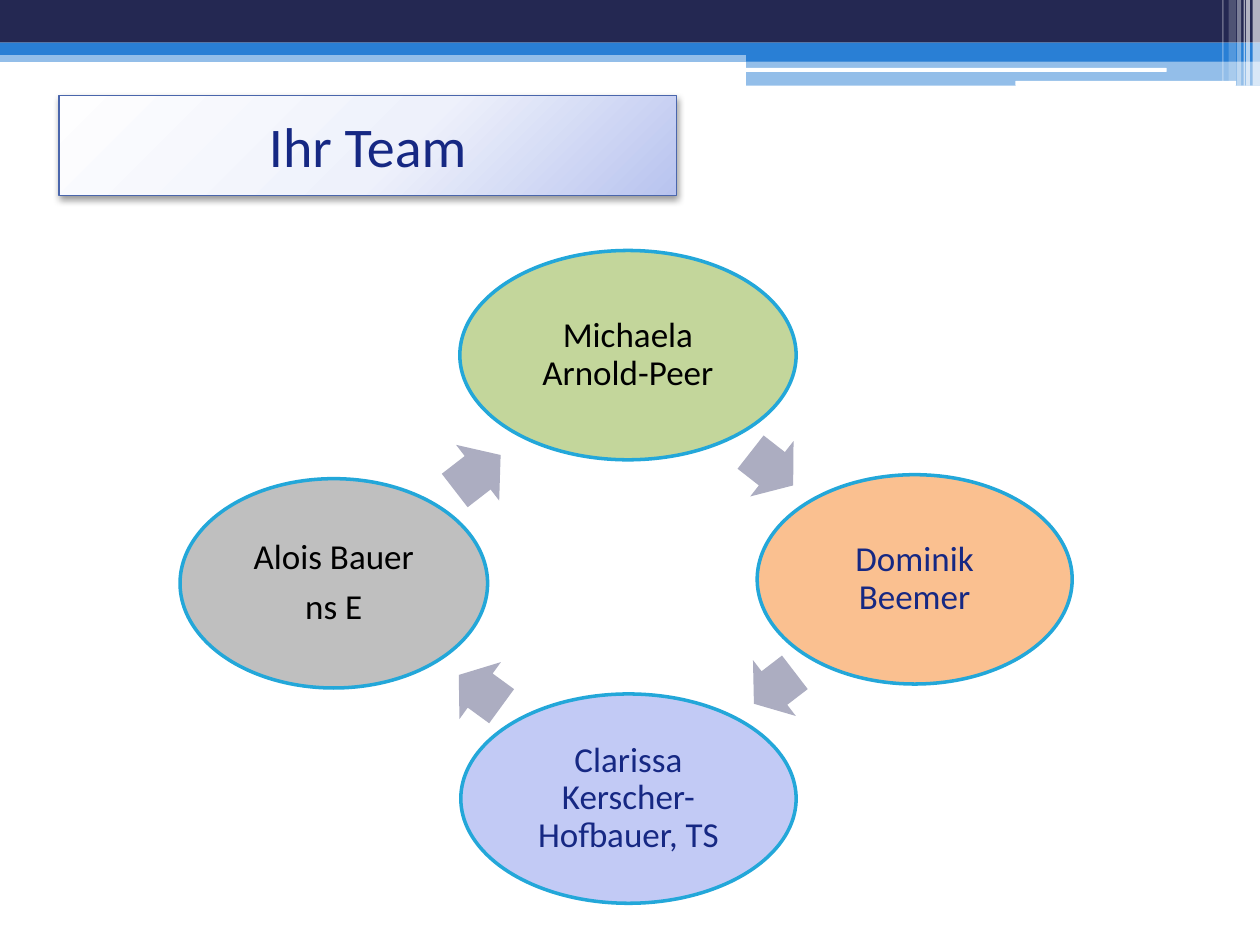
import pptx
import pptx.dml.color
import pptx.enum.shapes
import pptx.enum.text
import pptx.oxml
import pptx.oxml.ns
import pptx.util
from lxml import etree

Cm, Pt = pptx.util.Cm, pptx.util.Pt
RGBColor = pptx.dml.color.RGBColor
SHAPE = pptx.enum.shapes.MSO_SHAPE
qn = pptx.oxml.ns.qn

WHITE = RGBColor(0xFF, 0xFF, 0xFF)
BLACK = RGBColor(0x00, 0x00, 0x00)
NAVY = RGBColor(0x24, 0x28, 0x52)
BLUE = RGBColor(0x29, 0x7F, 0xD5)
INK = RGBColor(0x16, 0x28, 0x83)
TITLE_EDGE = RGBColor(0x4A, 0x66, 0xAC)
OVAL_EDGE = RGBColor(0x23, 0xA7, 0xD9)
ARROW_GREY = RGBColor(0xAC, 0xAD, 0xC1)
GREEN = RGBColor(0xC3, 0xD6, 0x9B)
ORANGE = RGBColor(0xFA, 0xC0, 0x90)
LILAC = RGBColor(0xC2, 0xCA, 0xF5)
GREY = RGBColor(0xBF, 0xBF, 0xBF)

TITLE = "Ihr Team"
TITLE_BOX = (1.19, 1.93, 12.45, 2.01)
TITLE_STOPS = [(0, "FEFEFF"), (55, "EEF1FB"), (100, "B8C3EF")]

# Centre x, centre y, width (cm), fill, text colour, paragraphs
MEMBERS = [
    (12.66, 7.16, 6.78, GREEN, BLACK, ["Michaela Arnold-Peer"]),
    (18.44, 11.68, 6.35, ORANGE, INK, ["Dominik Beemer"]),
    (12.67, 16.1, 6.76, LILAC, INK, ["Clarissa Kerscher-Hofbauer, TS"]),
    (6.73, 11.76, 6.2, GREY, BLACK, ["Alois Bauer", "ns E"]),
]
OVAL_HEIGHT = 4.22

# Centre x, centre y, length (cm), rotation
ARROWS = [
    (15.56, 9.45, 1.09, 38),
    (15.61, 13.87, 1.04, 142.5),
    (9.68, 13.92, 1.07, 216.1),
    (9.63, 9.53, 1.17, 322.3),
]
ARROW_HEIGHT = 1.42

# Left, top, width, height (cm), colour, opacity in percent
BANDS = [
    (0, 1.02, 25.4, 0.23, BLUE, 50),
    (0, 0, 25.4, 0.86, NAVY, 100),
    (0, 0.86, 25.4, 0.25, BLUE, 100),
    (15.04, 0.99, 10.36, 0.25, BLUE, 100),
    (15.04, 1.22, 10.36, 0.51, BLUE, 50),
]
RULES = [(15.01, 1.37, 8.51, 0.08), (20.47, 1.63, 4.45, 0.1)]
# Left, width, height (cm), opacity in percent
STRIPES = [
    (25.25, 0.15, 1.73, 65),
    (25.12, 0.08, 1.73, 65),
    (25.07, 0.03, 1.73, 60),
    (24.94, 0.08, 1.73, 40),
    (24.77, 0.15, 1.63, 20),
    (24.64, 0.03, 1.63, 30),
]


def add_shape(slide, kind, box, fill, edge=None, edge_width=0, opacity=100):
    shape = slide.shapes.add_shape(kind, *(Cm(value) for value in box))
    shape.shadow.inherit = False
    shape.fill.solid()
    shape.fill.fore_color.rgb = fill
    if opacity < 100:
        color = shape._element.spPr.find(".//" + qn("a:srgbClr"))
        etree.SubElement(color, qn("a:alpha"), val=str(opacity * 1000))
    if edge is None:
        shape.line.fill.background()
    else:
        shape.line.color.rgb = edge
        shape.line.width = Pt(edge_width)
    return shape


def centred(x, y, width, height):
    return x - width / 2, y - height / 2, width, height


def write_text(shape, lines, size, color, paragraph_format):
    frame = shape.text_frame
    frame.word_wrap = True
    frame.vertical_anchor = pptx.enum.text.MSO_ANCHOR.MIDDLE
    frame.text = "\n".join(lines)
    for paragraph in frame.paragraphs:
        paragraph.alignment = pptx.enum.text.PP_ALIGN.CENTER
        for name, value in paragraph_format.items():
            setattr(paragraph, name, value)
        for name, value in {"size": Pt(size), "name": "Calibri"}.items():
            setattr(paragraph.font, name, value)
        paragraph.font.color.rgb = color


def style_title(shape):
    """Give the title box its radial gradient and soft shadow."""
    properties = shape._element.spPr
    stops = "".join(
        f'<a:gs pos="{position * 1000}"><a:srgbClr val="{color}"/></a:gs>'
        for position, color in TITLE_STOPS)
    namespace = pptx.oxml.ns.nsdecls("a")
    gradient = pptx.oxml.parse_xml(
        f'<a:gradFill {namespace} rotWithShape="1"><a:gsLst>{stops}</a:gsLst>'
        '<a:path path="circle"><a:fillToRect l="-40000" t="-90000" '
        'r="140000" b="190000"/></a:path></a:gradFill>')
    properties.replace(properties.find(qn("a:solidFill")), gradient)
    properties.find(qn("a:effectLst")).append(pptx.oxml.parse_xml(
        f'<a:outerShdw {namespace} blurRad="{Pt(4.1)}" dist="{Pt(2)}" '
        'dir="5400000" rotWithShape="0"><a:srgbClr val="000000">'
        '<a:alpha val="40000"/></a:srgbClr></a:outerShdw>'))


def add_header(slide):
    for *box, color, opacity in BANDS:
        add_shape(slide, SHAPE.RECTANGLE, box, color, opacity=opacity)
    for box in RULES:
        add_shape(slide, SHAPE.ROUNDED_RECTANGLE, box, WHITE)
    for left, width, height, opacity in STRIPES:
        add_shape(slide, SHAPE.RECTANGLE, (left, 0, width, height), WHITE,
                  opacity=opacity)


def add_cycle(slide):
    for member, arrow_data in zip(MEMBERS, ARROWS):
        x, y, width, fill, color, lines = member
        oval = add_shape(slide, SHAPE.OVAL, centred(x, y, width, OVAL_HEIGHT),
                         fill, OVAL_EDGE, 2)
        for side in ("left", "top", "right", "bottom"):
            setattr(oval.text_frame, "margin_" + side, Cm(0.08))
        write_text(oval, lines, 20, color,
                   {"line_spacing": 0.9, "space_after": Pt(7)})

        x, y, length, rotation = arrow_data
        arrow = add_shape(slide, SHAPE.RIGHT_ARROW,
                          centred(x, y, length, ARROW_HEIGHT), ARROW_GREY)
        arrow.adjustments[0] = 0.6
        arrow.adjustments[1] = 0.5
        arrow.rotation = rotation


def main():
    presentation = pptx.Presentation()
    presentation.slide_width = Cm(25.4)
    presentation.slide_height = Cm(19.05)
    slide = presentation.slides.add_slide(presentation.slide_layouts[6])
    add_header(slide)
    title = add_shape(slide, SHAPE.RECTANGLE, TITLE_BOX, WHITE, TITLE_EDGE, 0.75)
    style_title(title)
    write_text(title, [TITLE], 32, INK, {})
    add_cycle(slide)
    presentation.save("out.pptx")


if __name__ == "__main__":
    main()
